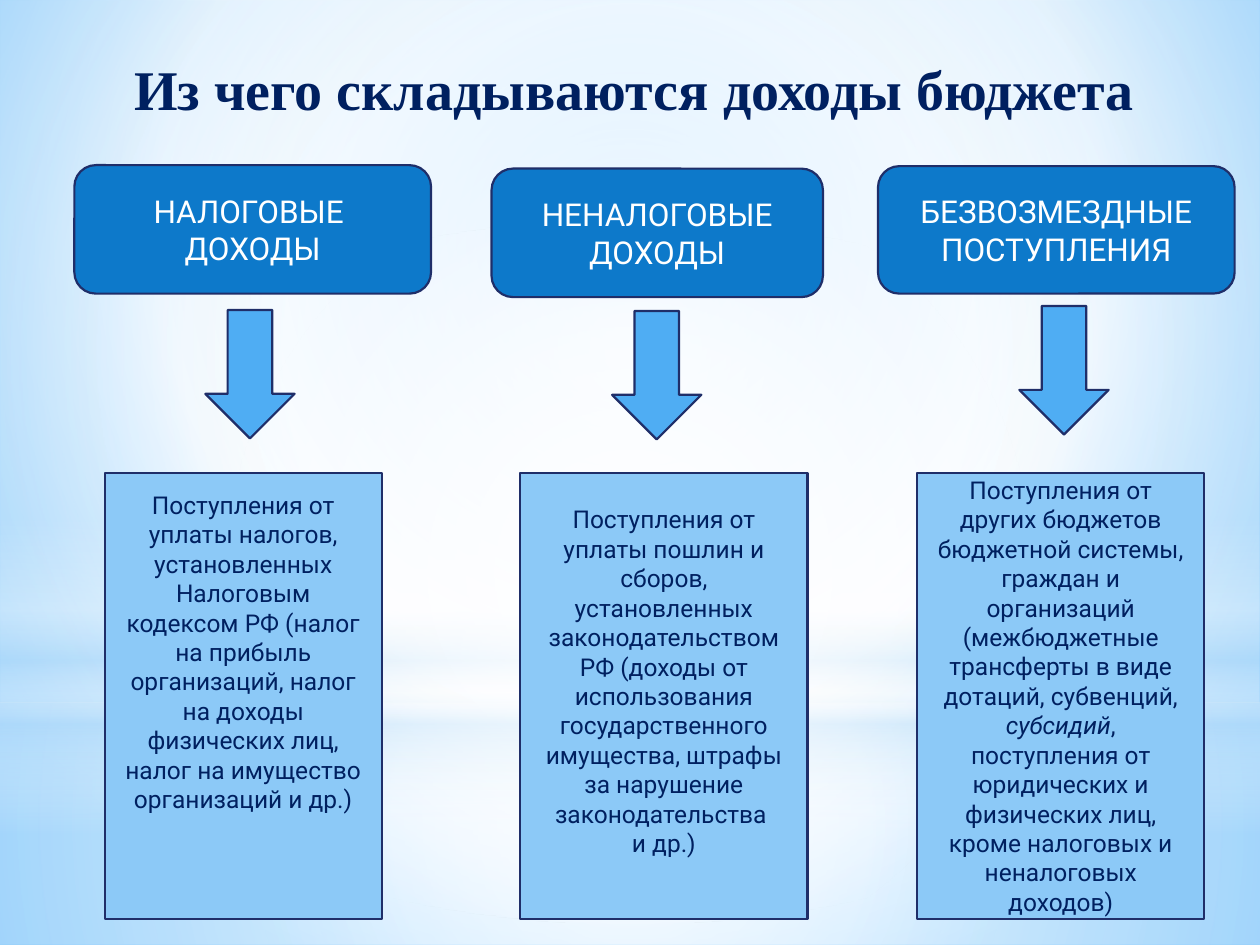
from lxml import etree
from pptx import Presentation
from pptx.dml.color import RGBColor
from pptx.enum.shapes import MSO_SHAPE
from pptx.enum.text import MSO_ANCHOR, PP_ALIGN
from pptx.oxml.ns import qn
from pptx.util import Cm, Pt

RECT, OVAL = MSO_SHAPE.RECTANGLE, MSO_SHAPE.OVAL
ROUND, ARROW = MSO_SHAPE.ROUNDED_RECTANGLE, MSO_SHAPE.DOWN_ARROW
MIDDLE = MSO_ANCHOR.MIDDLE
CENTER, RIGHT = PP_ALIGN.CENTER, PP_ALIGN.RIGHT

COLORS = {
    "ink": "002060", "line": "1F2E69", "head": "0D79CA", "arrow": "4FADF3",
    "box": "8CC9F7", "white": "FFFFFF", "haze": "B4DCFA",
    "sky": "9ED5FF", "deep": "5BB9FF",
}
TITLE = "Из чего складываются доходы бюджета"

# Each place is left, top, width, height in cm; pad is the gap under the text.
COLUMNS = [
    {"head": ["НАЛОГОВЫЕ ", "ДОХОДЫ"], "head_at": (1.5, 3.33, 7.19, 2.59),
     "arrow_at": (4.14, 6.25), "box_at": (2.11, 5.59), "pad": 1.9,
     "body": [["Поступления от уплаты налогов, установленных Налоговым кодексом "
               "РФ (налог на прибыль организаций, налог на доходы физических "
               "лиц, налог на имущество организаций и др.)"]]},
    {"head": ["НЕНАЛОГОВЫЕ ДОХОДЫ"], "head_at": (9.91, 3.4, 6.68, 2.59),
     "arrow_at": (12.34, 6.27), "box_at": (10.49, 5.79), "pad": 0.72,
     "body": [["Поступления от уплаты пошлин и сборов, установленных "
               "законодательством РФ (доходы от использования "
               "государственного имущества, штрафы за нарушение "
               "законодательства "], ["и др.)"]]},
    {"head": ["БЕЗВОЗМЕЗДНЫЕ ПОСТУПЛЕНИЯ"], "head_at": (17.7, 3.35, 7.19, 2.57),
     "arrow_at": (20.55, 6.17), "box_at": (18.49, 5.79), "pad": 0.13,
     "body": [["Поступления от других бюджетов бюджетной системы, граждан и "
               "организаций (межбюджетные трансферты в виде дотаций, "
               "субвенций, ", "*субсидий",
               ", поступления от юридических и физических лиц, кроме "
               "налоговых и неналоговых доходов)"]]},
]
ARROW_W, ARROW_H = 1.8, 2.59
BOX_TOP, BOX_H = 9.53, 8.99

# Stops are position, color, opacity, all in percent.
MID = (50, 50, 50, 50)
SKY = [(0, "sky", 100), (60, "white", 100), (100, "deep", 100)]
GLOWS = [
    (RECT, (0, 14.17, 25.4, 4.88), MID,
     [(0, "white", 91), (37, "white", 76), (100, "haze", 79)]),
    (RECT, (0, 0, 25.4, 14.17), MID,
     [(0, "white", 89), (48, "white", 62), (100, "haze", 79)]),
    (RECT, (0, 10.46, 25.4, 6.35), None,
     [(0, "white", 0), (29, "white", 30), (45, "haze", 40),
      (55, "white", 26), (65, "haze", 60), (100, "white", 0)]),
    (OVAL, (0, 4.45, 25.4, 14.17), MID,
     [(0, "white", 100), (56, "white", 0)]),
]


def rgb(name):
    return RGBColor.from_string(COLORS[name])


def blend(parent, stops, focus):
    """Swap the solid fill in parent for a gradient: round if it has a focus."""
    grad = etree.Element(qn("a:gradFill"), rotWithShape="1")
    row = etree.SubElement(grad, qn("a:gsLst"))
    for pos, name, alpha in stops:
        stop = etree.SubElement(row, qn("a:gs"), pos=str(pos * 1000))
        color = etree.SubElement(stop, qn("a:srgbClr"), val=COLORS[name])
        if alpha < 100:
            etree.SubElement(color, qn("a:alpha"), val=str(alpha * 1000))
    if focus:
        way = etree.SubElement(grad, qn("a:path"))
        way.set("path", "circle")
        sides = {k: str(v * 1000) for k, v in zip("ltrb", focus)}
        etree.SubElement(way, qn("a:fillToRect"), sides)
    else:
        etree.SubElement(grad, qn("a:lin"), ang="5400000", scaled="0")
    parent.replace(parent.find(qn("a:solidFill")), grad)


def add_form(slide, kind, place, fill, line="line"):
    form = slide.shapes.add_shape(kind, *map(Cm, place))
    form.shadow.inherit = False
    form.fill.solid()
    form.fill.fore_color.rgb = rgb(fill)
    if line:
        form.line.color.rgb = rgb(line)
        form.line.width = Pt(1.25)
    else:
        form.line.fill.background()
    return form


def style(para, size, color, face="Roboto", align=CENTER):
    para.alignment = align
    para.font.size = Pt(size)
    para.font.name = face
    para.font.color.rgb = rgb(color)


def write(form, paras, size, color):
    """Fill a shape with paragraphs of runs; a leading * marks italics."""
    frame = form.text_frame
    frame.word_wrap = True
    frame.vertical_anchor = MIDDLE
    for i, parts in enumerate(paras):
        para = frame.add_paragraph() if i else frame.paragraphs[0]
        style(para, size, color)
        for part in parts:
            run = para.add_run()
            run.text = part.lstrip("*")
            if part.startswith("*"):
                run.font.italic = True


def main():
    deck = Presentation()
    deck.slide_width, deck.slide_height = Cm(25.4), Cm(19.05)
    slide = deck.slides.add_slide(deck.slide_layouts[5])

    back = slide.background.fill
    back.solid()
    back.fore_color.rgb = rgb("white")
    blend(slide.element.find(".//" + qn("p:bgPr")), SKY, (20, 10, 20, 60))
    for kind, place, focus, stops in GLOWS:
        glow = add_form(slide, kind, place, "white", None)
        blend(glow.element.spPr, stops, focus)

    title = slide.shapes.title
    slide.shapes.element.append(title.element)  # bring in front of the glows
    title.left, title.top = Cm(2.29), Cm(0.91)
    title.width, title.height = Cm(20.83), Cm(1.75)
    title.text = TITLE
    title.text_frame.vertical_anchor = MIDDLE
    para = title.text_frame.paragraphs[0]
    style(para, 32, "ink", "Times New Roman", RIGHT)
    para.font.bold = True

    for col in COLUMNS:
        head = add_form(slide, ROUND, col["head_at"], "head")
        write(head, [[text] for text in col["head"]], 18, "white")
        add_form(slide, ARROW, (*col["arrow_at"], ARROW_W, ARROW_H), "arrow")
        left, width = col["box_at"]
        box = add_form(slide, RECT, (left, BOX_TOP, width, BOX_H), "box")
        write(box, col["body"], 14, "ink")
        box.text_frame.margin_bottom = Cm(col["pad"])

    deck.save("out.pptx")


if __name__ == "__main__":
    main()
